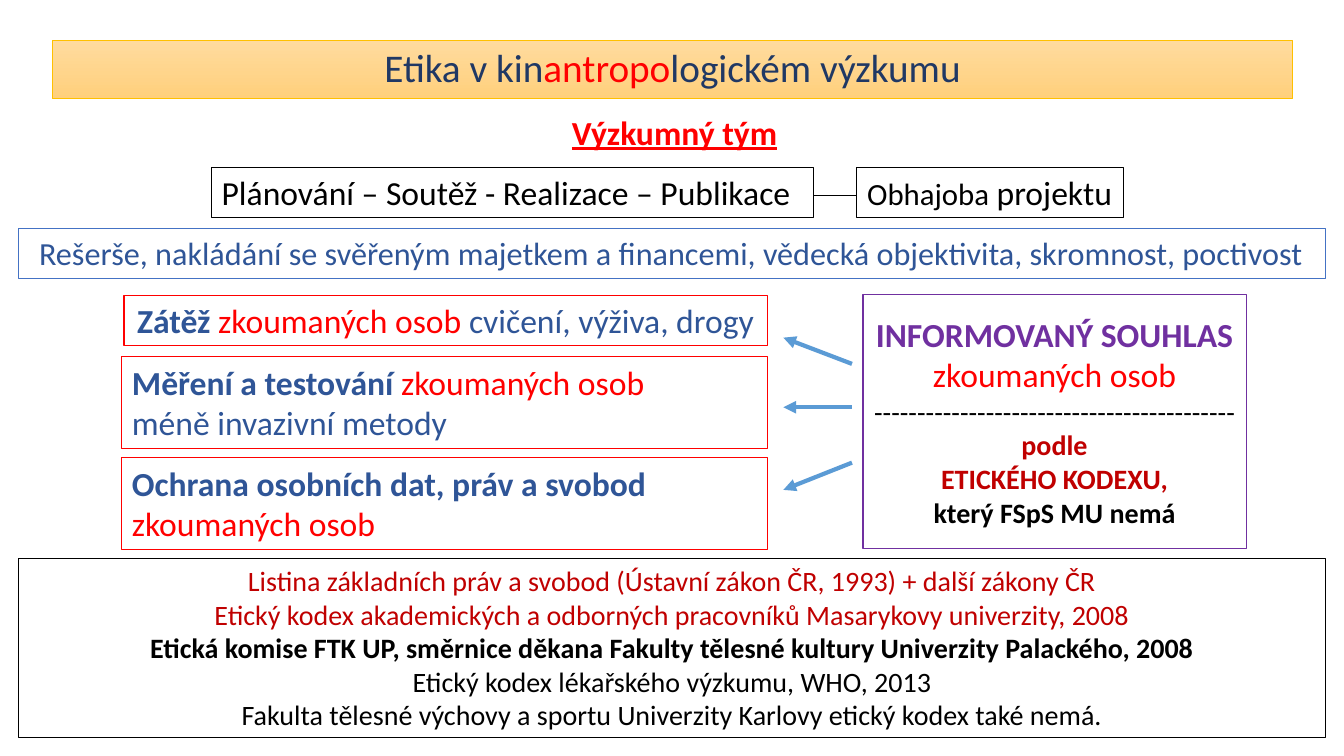
from dataclasses import dataclass
from lxml import etree
from pptx import Presentation
from pptx.dml.color import RGBColor
from pptx.enum.shapes import MSO_CONNECTOR, MSO_SHAPE
from pptx.enum.text import MSO_ANCHOR, MSO_AUTO_SIZE, PP_ALIGN
from pptx.oxml.ns import qn
from pptx.util import Pt

PX = 9144
LEFT, CENTER = PP_ALIGN.LEFT, PP_ALIGN.CENTER
TOP, MIDDLE = MSO_ANCHOR.TOP, MSO_ANCHOR.MIDDLE
RECT, LINE = MSO_SHAPE.RECTANGLE, MSO_CONNECTOR.STRAIGHT
FIXED = MSO_AUTO_SIZE.NONE


@dataclass(frozen=True)
class Theme:
    font: str = "Calibri"
    black: str = "000000"
    red: str = "FF0000"
    wine: str = "C00000"
    navy: str = "203864"
    blue: str = "2F5597"
    frame: str = "4472C4"
    arrow: str = "5B9BD5"
    plum: str = "7030A0"
    gold: str = "FFC000"
    light: str = "FFDB9E"
    deep: str = "FFD07C"
    head: int = 28
    body: int = 24
    wide: int = 23
    small: int = 22
    note: int = 20


class Board:
    def __init__(self, slide, theme):
        self.slide = slide
        self.theme = theme

    def place(self, shape, left, top, width, height):
        spots = {"left": left, "top": top, "width": width, "height": height}
        for name, value in spots.items():
            setattr(shape, name, value * PX)

    def edge(self, shape, color, width):
        shape.line.color.rgb = RGBColor.from_string(color)
        shape.line.width = Pt(width)

    def letter(self, shape, rows, align=CENTER, size=None, anchor=TOP, inset=5, space=1.0):
        frame = shape.text_frame
        look = {
            "word_wrap": True,
            "auto_size": FIXED,
            "vertical_anchor": anchor,
            "margin_left": 10 * PX,
            "margin_right": 10 * PX,
            "margin_top": inset * PX,
            "margin_bottom": 5 * PX,
        }
        for name, value in look.items():
            setattr(frame, name, value)
        for index, row in enumerate(rows):
            para = frame.add_paragraph() if index else frame.paragraphs[0]
            para.alignment = align
            para.line_spacing = space
            for text, color, *style in row:
                self.run(para, text, color, size or self.theme.body, *style)

    def run(self, para, text, color, size, form=None):
        run = para.add_run()
        run.text = text
        look = {"name": self.theme.font, "size": Pt(size), "bold": False}
        look.update(form or {})
        for name, value in look.items():
            setattr(run.font, name, value)
        run.font.color.rgb = RGBColor.from_string(color)

    def title(self, spot, row):
        shape = self.slide.shapes.title
        self.place(shape, *spot)
        shape.fill.gradient()
        shape.fill.gradient_angle = 270
        for stop, color in zip(shape.fill.gradient_stops, (self.theme.light, self.theme.deep)):
            stop.color.rgb = RGBColor.from_string(color)
        self.edge(shape, self.theme.gold, 0.5)
        self.letter(shape, [row], size=self.theme.head, anchor=MIDDLE, space=0.9)

    def label(self, spot, row):
        shape = self.slide.shapes.add_textbox(*(n * PX for n in spot))
        self.letter(shape, [row])

    def box(self, spot, color, rows, **form):
        shape = self.slide.shapes.add_shape(RECT, *(n * PX for n in spot))
        shape.shadow.inherit = False
        shape.fill.background()
        self.edge(shape, color, 0.75)
        self.letter(shape, rows, **form)

    def link(self, start, end, color, width, arrow=False):
        line = self.slide.shapes.add_connector(LINE, *(n * PX for n in start + end))
        self.edge(line, color, width)
        props = line.element.spPr
        if arrow:
            tail = etree.SubElement(props.find(qn("a:ln")), qn("a:tailEnd"))
            tail.set("type", "triangle")
        etree.SubElement(props, qn("a:effectLst"))


def main():
    deck = Presentation()
    deck.slide_width = 1333 * PX
    deck.slide_height = 750 * PX
    t = Theme()
    board = Board(deck.slides.add_slide(deck.slide_layouts[5]), t)
    bold = {"bold": True}
    mark = {"bold": True, "underline": True}
    less = {"size": Pt(t.small)}
    note = {"size": Pt(t.note)}
    strong = {**note, **bold}

    board.title((52, 40, 1230, 58), [
        ("Etika v kin", t.navy), ("antropo", t.red), ("logickém výzkumu", t.navy)])
    board.label((54, 106, 1230, 50), [("Výzkumný tým", t.red, mark)])

    board.box((210, 166, 597, 50), t.black, [
        [("Plánování – Soutěž - Realizace – Publikace", t.black)]], align=LEFT)
    board.box((849, 166, 265, 50), t.black, [
        [("Obhajoba", t.black, less), (" projektu", t.black)]])
    board.link((807, 194), (849, 194), t.black, 0.5)
    board.box((18, 227, 1297, 49), t.frame, [
        [("Rešerše, nakládání se svěřeným majetkem a financemi, "
          "vědecká objektivita, skromnost, poctivost", t.blue)]], size=t.wide)

    board.box((123, 293, 638, 50), t.red, [
        [("Zátěž ", t.blue, bold), ("zkoumaných osob ", t.red),
         ("cvičení, výživa, drogy", t.blue)]])
    board.box((121, 354, 640, 91), t.red, [
        [("Měření a testování ", t.blue, bold), ("zkoumaných osob", t.red)],
        [("méně invazivní metody", t.blue)]], align=LEFT)
    board.box((121, 454, 640, 91), t.red, [
        [("Ochrana osobních dat, práv a svobod ", t.blue, bold),
         ("zkoumaných osob", t.red)]], align=LEFT)

    board.box((856, 292, 380, 252), t.plum, [
        [("INFORMOVANÝ SOUHLAS", t.plum, bold)],
        [("zkoumaných osob", t.red)],
        [("-" * 42, t.black, note)],
        [("podle", t.wine, strong)],
        [("ETICKÉHO KODEXU,", t.wine, strong)],
        [("který FSpS MU nemá", t.black, strong)]], inset=19)
    for start, end in ((361, 335), (404, 404), (459, 486)):
        board.link((845, start), (777, end), t.arrow, 3, arrow=True)

    board.box((18, 554, 1297, 178), t.black, [
        [("Listina základních práv a svobod (Ústavní zákon ČR, 1993) + další zákony ČR", t.wine)],
        [("Etický kodex akademických a odborných pracovníků Masarykovy univerzity, 2008", t.wine)],
        [("Etická komise FTK UP, směrnice děkana Fakulty tělesné kultury "
          "Univerzity Palackého, 2008", t.black, bold)],
        [("Etický kodex lékařského výzkumu, WHO, 2013", t.black)],
        [("Fakulta tělesné výchovy a sportu Univerzity Karlovy etický kodex také nemá.", t.black)],
    ], size=t.note)
    deck.save("out.pptx")


if __name__ == "__main__":
    main()
